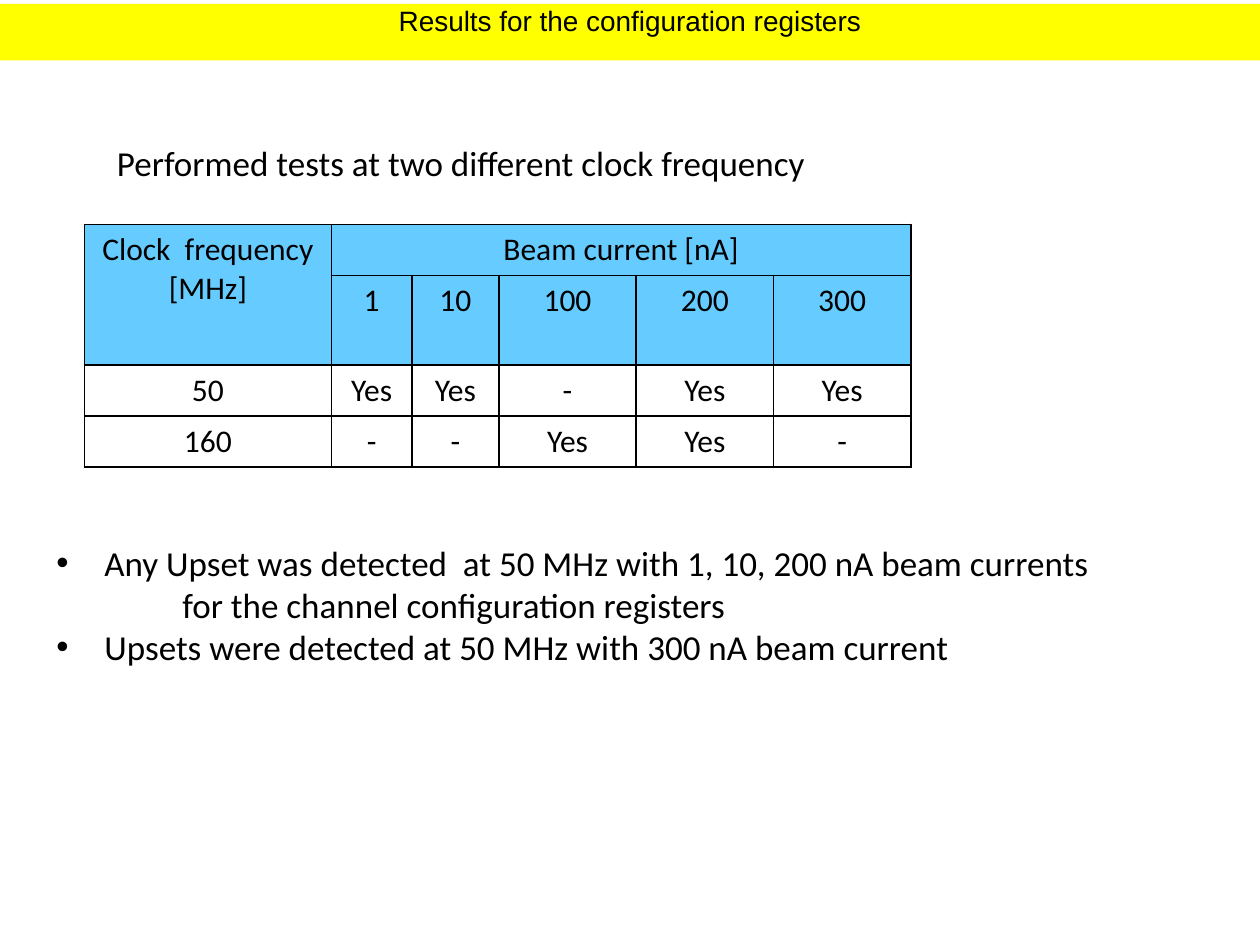
"""Build the slide with test results for the configuration registers."""
from dataclasses import dataclass

from lxml import etree
from pptx import Presentation
from pptx.dml.color import RGBColor
from pptx.enum.shapes import MSO_SHAPE
from pptx.enum.text import MSO_ANCHOR, PP_ALIGN
from pptx.oxml.ns import qn
from pptx.util import Inches, Pt

RECTANGLE = MSO_SHAPE.RECTANGLE
TOP = MSO_ANCHOR.TOP
LEFT, CENTER = PP_ALIGN.LEFT, PP_ALIGN.CENTER


@dataclass(frozen=True)
class Theme:
    ink: str = "000000"
    banner: str = "FFFF00"
    header: str = "66CCFF"
    title_font: str = "Arial"
    body_font: str = "Calibri"
    title_size: float = 16
    body_size: float = 20
    table_size: float = 18
    border: float = 1


@dataclass(frozen=True)
class Box:
    left: float
    top: float
    width: float
    height: float

    def lengths(self) -> tuple:
        return tuple(Inches(value) for value in (self.left, self.top, self.width, self.height))


@dataclass(frozen=True)
class Line:
    text: str
    margin: float = 0
    hanging: float = 0
    bullet: str = ""


THEME = Theme()
TITLE_BOX = Box(0, 0.03, 10, 0.45)
INTRO_BOX = Box(0.83, 1.07, 5.72, 0.44)
TABLE_BOX = Box(0.67, 1.78, 6.56, 1.91)
FINDINGS_BOX = Box(0.35, 3.91, 8.6, 1.78)
FINDINGS_INSET = 0.39
COLUMN_WIDTHS = (1.96, 0.64, 0.69, 1.09, 1.09, 1.09)
ROW_HEIGHTS = (0.4, 0.71, 0.4, 0.4)
HEADER_ROWS = 2
TABLE_ROWS = (
    ("Clock  frequency\n[MHz]", "Beam current [nA]", "", "", "", ""),
    ("", "1", "10", "100", "200", "300"),
    ("50", "Yes", "Yes", "-", "Yes", "Yes"),
    ("160", "-", "-", "Yes", "Yes", "-"),
)
FINDINGS = (
    Line("Any Upset was detected  at 50 MHz with 1, 10, 200 nA beam currents", 0.38, 0.38, "•"),
    Line("for the channel configuration registers", 1),
    Line("Upsets were detected at 50 MHz with 300 nA beam current", 0.38, 0.38, "•"),
)


def write_text(frame, lines: tuple, *, size: float, font: str = THEME.body_font,
               color: str = THEME.ink, align=LEFT) -> None:
    """Fill a text frame with formatted lines."""
    for index, line in enumerate(lines):
        paragraph = frame.paragraphs[0] if index == 0 else frame.add_paragraph()
        paragraph.alignment = align
        run = paragraph.add_run()
        run.text = line.text
        run.font.name = font
        run.font.size = Pt(size)
        run.font.color.rgb = RGBColor.from_string(color)
        properties = paragraph._p.get_or_add_pPr()
        if line.margin:
            properties.set("marL", str(Inches(line.margin)))
            properties.set("indent", str(-Inches(line.hanging)))
        if line.bullet:
            etree.SubElement(properties, qn("a:buFont"), typeface="Arial")
            etree.SubElement(properties, qn("a:buChar"), char=line.bullet)


def add_banner(slide, box: Box, title: str) -> None:
    """Draw the title banner."""
    shape = slide.shapes.add_shape(RECTANGLE, *box.lengths())
    shape.shadow.inherit = False
    shape.fill.solid()
    shape.fill.fore_color.rgb = RGBColor.from_string(THEME.banner)
    shape.line.fill.background()
    frame = shape.text_frame
    frame.vertical_anchor = TOP
    frame.margin_top = frame.margin_bottom = 0
    write_text(frame, (Line(title),), size=THEME.title_size, font=THEME.title_font, align=CENTER)


def add_text(slide, box: Box, lines: tuple, inset: float = 0.05) -> None:
    """Add a text box whose text starts below the given inset."""
    frame = slide.shapes.add_textbox(*box.lengths()).text_frame
    frame.word_wrap = True
    frame.margin_top = Inches(inset)
    write_text(frame, lines, size=THEME.body_size)


def set_borders(cell) -> None:
    """Outline the four sides of a table cell."""
    properties = cell._tc.get_or_add_tcPr()
    for index, side in enumerate(("a:lnL", "a:lnR", "a:lnT", "a:lnB")):
        border = etree.Element(qn(side), w=str(Pt(THEME.border)))
        fill = etree.SubElement(border, qn("a:solidFill"))
        etree.SubElement(fill, qn("a:srgbClr"), val=THEME.ink)
        properties.insert(index, border)


def add_results_table(slide, box: Box) -> None:
    """Add the table of clock frequencies and beam currents."""
    table = slide.shapes.add_table(len(ROW_HEIGHTS), len(COLUMN_WIDTHS), *box.lengths()).table
    for column, width in zip(table.columns, COLUMN_WIDTHS):
        column.width = Inches(width)
    for row, height in zip(table.rows, ROW_HEIGHTS):
        row.height = Inches(height)
    table.cell(0, 0).merge(table.cell(1, 0))
    table.cell(0, 1).merge(table.cell(0, len(COLUMN_WIDTHS) - 1))
    for row_index, values in enumerate(TABLE_ROWS):
        for column_index, value in enumerate(values):
            cell = table.cell(row_index, column_index)
            if row_index < HEADER_ROWS:
                cell.fill.solid()
                cell.fill.fore_color.rgb = RGBColor.from_string(THEME.header)
            else:
                cell.fill.background()
            set_borders(cell)
            if value:
                lines = tuple(Line(text) for text in value.split("\n"))
                write_text(cell.text_frame, lines, size=THEME.table_size, align=CENTER)


def main() -> None:
    """Build and save the presentation."""
    presentation = Presentation()
    presentation.slide_width, presentation.slide_height = Inches(10), Inches(7.5)
    slide = presentation.slides.add_slide(presentation.slide_layouts[6])
    add_banner(slide, TITLE_BOX, "Results for the configuration registers")
    add_results_table(slide, TABLE_BOX)
    add_text(slide, INTRO_BOX, (Line("Performed tests at two different clock frequency"),))
    add_text(slide, FINDINGS_BOX, FINDINGS, FINDINGS_INSET)
    presentation.save("out.pptx")


if __name__ == "__main__":
    main()
